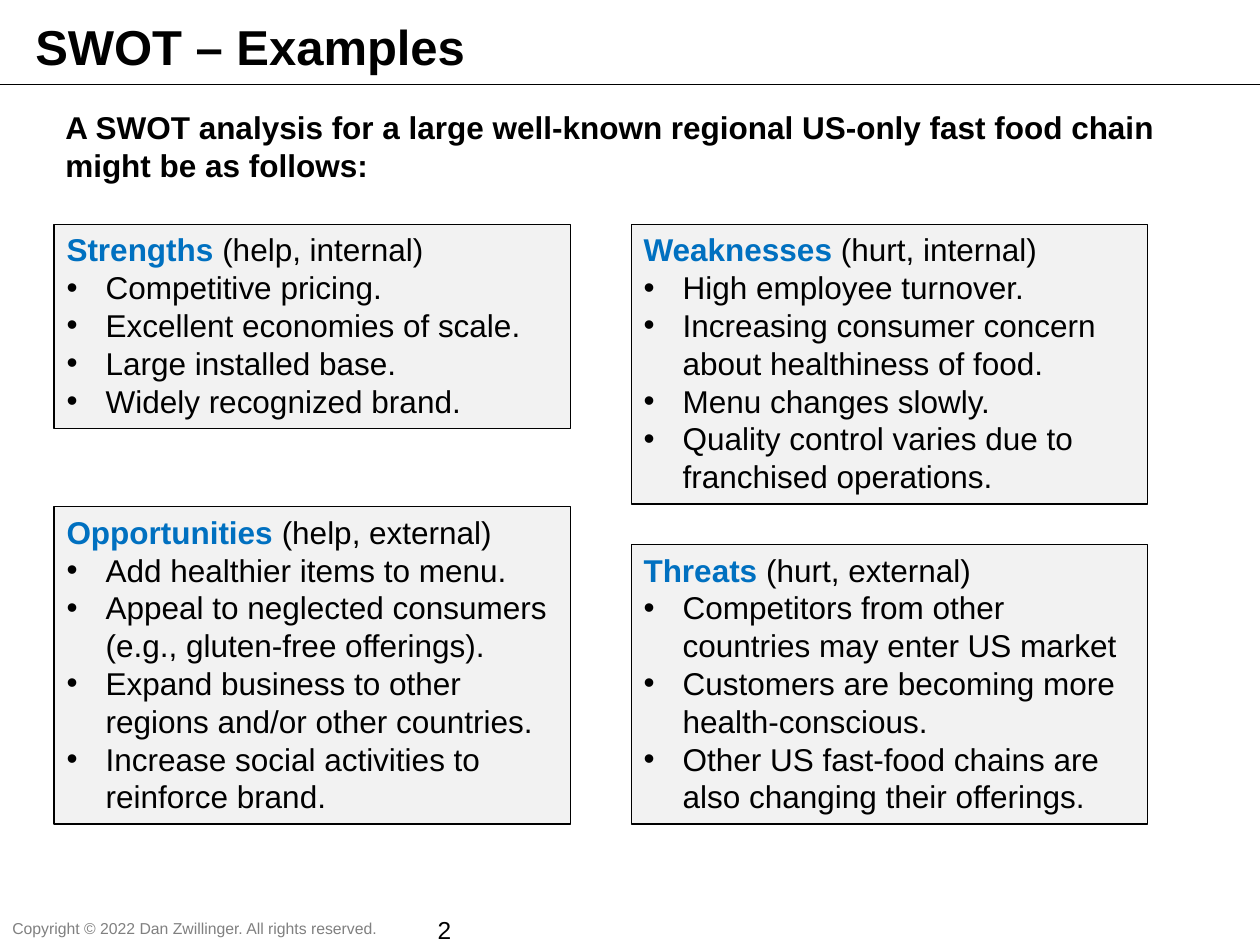
"""Build the SWOT examples slide."""
from lxml.etree import SubElement
from pptx import Presentation
from pptx.dml.color import RGBColor
from pptx.enum.shapes import MSO_CONNECTOR as Conn, MSO_SHAPE as Shape
from pptx.enum.text import MSO_ANCHOR as Anchor, PP_ALIGN as Align
from pptx.oxml.ns import qn
from pptx.util import Inches, Pt

BLACK = RGBColor(0, 0, 0)
GRAY = RGBColor(0x80, 0x80, 0x80)
BLUE = RGBColor(0x00, 0x70, 0xC0)
PALE = RGBColor(0xF2, 0xF2, 0xF2)

TITLE = "SWOT – Examples"
TITLE_BOX = (0.18, 0.08, 4.42, 0.57)
TITLE_FONT = {"size": Pt(28), "bold": True}
NOTES = [
    ("A SWOT analysis for a large well-known regional US-only fast food chain might be as follows:",
     (0.42, 0.81, 9.05, 0.71), {"size": Pt(18), "bold": True}, Align.LEFT, True),
    ("Copyright © 2022 Dan Zwillinger. All rights reserved.",
     (0, 7.24, 3.13, 0.25), {"size": Pt(9), "color": GRAY}, Align.LEFT, False),
    ("2", (3.13, 7.21, 0.55, 0.27), {"size": Pt(14)}, Align.RIGHT, True),
]
SWOT = [
    ("Strengths", "(help, internal)", 5, [
        "Competitive pricing.",
        "Excellent economies of scale.",
        "Large installed base.",
        "Widely recognized brand."]),
    ("Weaknesses", "(hurt, internal)", 7, [
        "High employee turnover.",
        "Increasing consumer concern about healthiness of food.",
        "Menu changes slowly.",
        "Quality control varies due to franchised operations."]),
    ("Opportunities", "(help, external)", 8, [
        "Add healthier items to menu.",
        "Appeal to neglected consumers (e.g., gluten-free offerings).",
        "Expand business to other regions and/or other countries.",
        "Increase social activities to reinforce brand."]),
    ("Threats", "(hurt, external)", 7, [
        "Competitors from other countries may enter US market",
        "Customers are becoming more health-conscious.",
        "Other US fast-food chains are also changing their offerings."]),
]
LEFT, STEP, WIDTH = 0.43, 4.58, 4.1
TOP, BOTTOM = 1.78, 6.54
LINE, PAD = 0.3, 0.12
INDENT = Inches(0.31)


def style(font, color=BLACK, **values):
    font.color.rgb = color
    for name, value in {"name": "Arial", "bold": False, **values}.items():
        setattr(font, name, value)


def add_run(para, text, **values):
    run = para.add_run()
    run.text = text
    style(run.font, **values)


def set_frame(frame, anchor=Anchor.TOP, wrap=True):
    values = {"margin_left": Inches(0.1), "margin_right": Inches(0.1),
              "margin_top": Inches(0.05), "margin_bottom": Inches(0.05),
              "vertical_anchor": anchor, "word_wrap": wrap}
    for name, value in values.items():
        setattr(frame, name, value)


def add_bullet(para):
    props = para._p.get_or_add_pPr()
    props.set("marL", str(INDENT))
    props.set("indent", str(-INDENT))
    SubElement(props, qn("a:buFont"), typeface="Arial")
    SubElement(props, qn("a:buChar"), char="•")


def add_title(slide):
    title = slide.shapes.title
    for name, value in zip(("left", "top", "width", "height"), TITLE_BOX):
        setattr(title, name, Inches(value))
    set_frame(title.text_frame, Anchor.MIDDLE)
    para = title.text_frame.paragraphs[0]
    para.alignment = Align.LEFT
    add_run(para, TITLE, **TITLE_FONT)


def add_rule(slide):
    rule = slide.shapes.add_connector(
        Conn.STRAIGHT, 0, Inches(0.67), Inches(10), Inches(0.67))
    rule.line.color.rgb = BLACK
    rule.line.width = Pt(0.75)
    SubElement(rule._element.spPr, qn("a:effectLst"))


def add_note(slide, text, box, values, align, wrap):
    frame = slide.shapes.add_textbox(*map(Inches, box)).text_frame
    set_frame(frame, wrap=wrap)
    para = frame.paragraphs[0]
    para.alignment = align
    add_run(para, text, **values)


def add_panel(slide, index, head, scope, lines, items):
    row, col = divmod(index, 2)
    height = lines * LINE + PAD
    top = BOTTOM - height if row else TOP
    box = slide.shapes.add_shape(
        Shape.RECTANGLE, *map(Inches, (LEFT + col * STEP, top, WIDTH, height)))
    box.shadow.inherit = False
    box.fill.solid()
    box.fill.fore_color.rgb = PALE
    box.line.color.rgb = BLACK
    box.line.width = Pt(0.75)
    frame = box.text_frame
    set_frame(frame)
    para = frame.paragraphs[0]
    para.alignment = Align.LEFT
    add_run(para, head + " ", size=Pt(18), bold=True, color=BLUE)
    add_run(para, scope, size=Pt(18))
    for item in items:
        para = frame.add_paragraph()
        para.alignment = Align.LEFT
        add_bullet(para)
        add_run(para, item, size=Pt(18))


def main():
    deck = Presentation()
    deck.slide_width, deck.slide_height = Inches(10), Inches(7.5)
    slide = deck.slides.add_slide(deck.slide_layouts[5])
    add_rule(slide)
    add_title(slide)
    for note in NOTES:
        add_note(slide, *note)
    for index, panel in enumerate(SWOT):
        add_panel(slide, index, *panel)
    deck.save("out.pptx")


if __name__ == "__main__":
    main()
